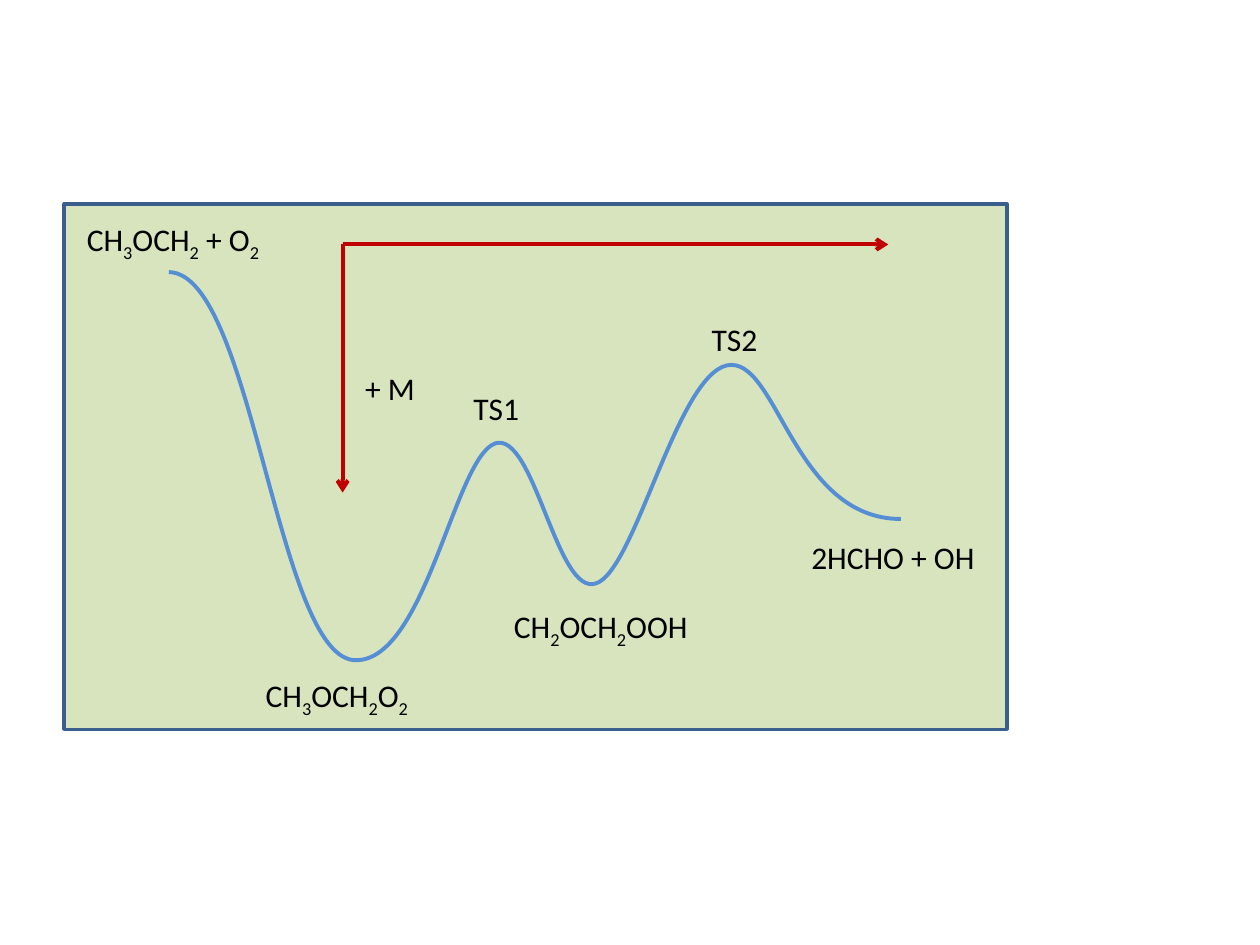
"""Build a slide with the reaction energy profile of CH3OCH2 + O2."""
from pptx import Presentation
from pptx.dml.color import RGBColor
from pptx.enum.shapes import MSO_CONNECTOR as Connector, MSO_SHAPE as Shape
from pptx.enum.text import MSO_AUTO_SIZE as AutoSize
from pptx.oxml.ns import qn
from pptx.util import Pt
from lxml.etree import SubElement

PANEL = (36.7, 116.6, 538.6, 300.2)
PROFILE_START = (96.5, 155.5)
PROFILE_BENDS = [
    [(144.7, 156.2), (158.4, 378.7), (203.8, 377.3)],
    [(243.4, 376.6), (259.9, 261.4), (283, 253.4)],
    [(305.3, 246.2), (318.2, 341.3), (340.6, 333.4)],
    [(362.9, 326.2), (386.6, 215.3), (415.4, 208.8)],
    [(444.2, 203), (452.9, 296.6), (514.8, 296.6)],
]
PATHWAY_CORNER = (195.8, 139.7)
PATHWAY_ENDS = [(507.6, 139.7), (195.8, 281.5)]
LABEL_HEIGHT = 29
LABELS = [
    (42.5, 122.4, 116.6, ("CH", "3", "OCH", "2", " + O", "2")),
    (144.7, 383, 99.4, ("CH", "3", "OCH", "2", "O", "2")),
    (263.5, 218.9, 41, ("TS1",)),
    (399.6, 179.3, 41, ("TS2",)),
    (456.5, 303.8, 108.7, ("2HCHO + OH",)),
    (286.6, 343.4, 116.6, ("CH", "2", "OCH", "2", "OOH")),
    (201.6, 207.4, 43.2, ("+ M",)),
]


def color(value):
    return RGBColor.from_string(value)


def points(values):
    return [Pt(value) for value in values]


def style_line(item, value, width):
    item.line.color.rgb = color(value)
    item.line.width = Pt(width)


def add_panel(shapes):
    panel = shapes.add_shape(Shape.RECTANGLE, *points(PANEL))
    panel.shadow.inherit = False
    panel.fill.solid()
    panel.fill.fore_color.rgb = color("D7E4BD")
    style_line(panel, "3A5F8C", 2)


def add_profile(shapes):
    builder = shapes.build_freeform(*points(PROFILE_START), scale=1.0)
    builder.add_line_segments([points(p) for bend in PROFILE_BENDS for p in bend], close=False)
    profile = builder.convert_to_shape()
    profile.shadow.inherit = False
    profile.fill.background()
    style_line(profile, "558ED5", 2.25)
    outline = next(profile.element.iter(qn("a:path")))
    segments = outline.findall(qn("a:lnTo"))
    for first in range(0, len(segments), 3):
        bend = SubElement(outline, qn("a:cubicBezTo"))
        for segment in segments[first:first + 3]:
            bend.append(segment[0])
            outline.remove(segment)


def add_pathway(shapes, end):
    pathway = shapes.add_connector(Connector.STRAIGHT, *points(PATHWAY_CORNER + end))
    style_line(pathway, "C00000", 2.25)
    SubElement(pathway.line._get_or_add_ln(), qn("a:tailEnd"), type="arrow")
    SubElement(pathway.element.spPr, qn("a:effectLst"))


def add_label(shapes, left, top, width, parts):
    label = shapes.add_textbox(*points((left, top, width, LABEL_HEIGHT)))
    frame = label.text_frame
    frame.word_wrap = False
    frame.auto_size = AutoSize.SHAPE_TO_FIT_TEXT
    for index, part in enumerate(parts):
        run = frame.paragraphs[0].add_run()
        run.text = part
        run.font.name = "Calibri"
        run.font.size = Pt(18)
        run.font.color.rgb = color("000000")
        if index % 2:
            run.font._element.set("baseline", "-25000")


def main():
    deck = Presentation()
    deck.slide_width, deck.slide_height = Pt(720), Pt(540)
    slide = deck.slides.add_slide(deck.slide_layouts[6])
    diagram = slide.shapes.add_group_shape().shapes
    add_panel(diagram)
    add_profile(diagram)
    for end in PATHWAY_ENDS:
        add_pathway(diagram, end)
    for label in LABELS:
        add_label(diagram, *label)
    deck.save("out.pptx")


if __name__ == "__main__":
    main()
